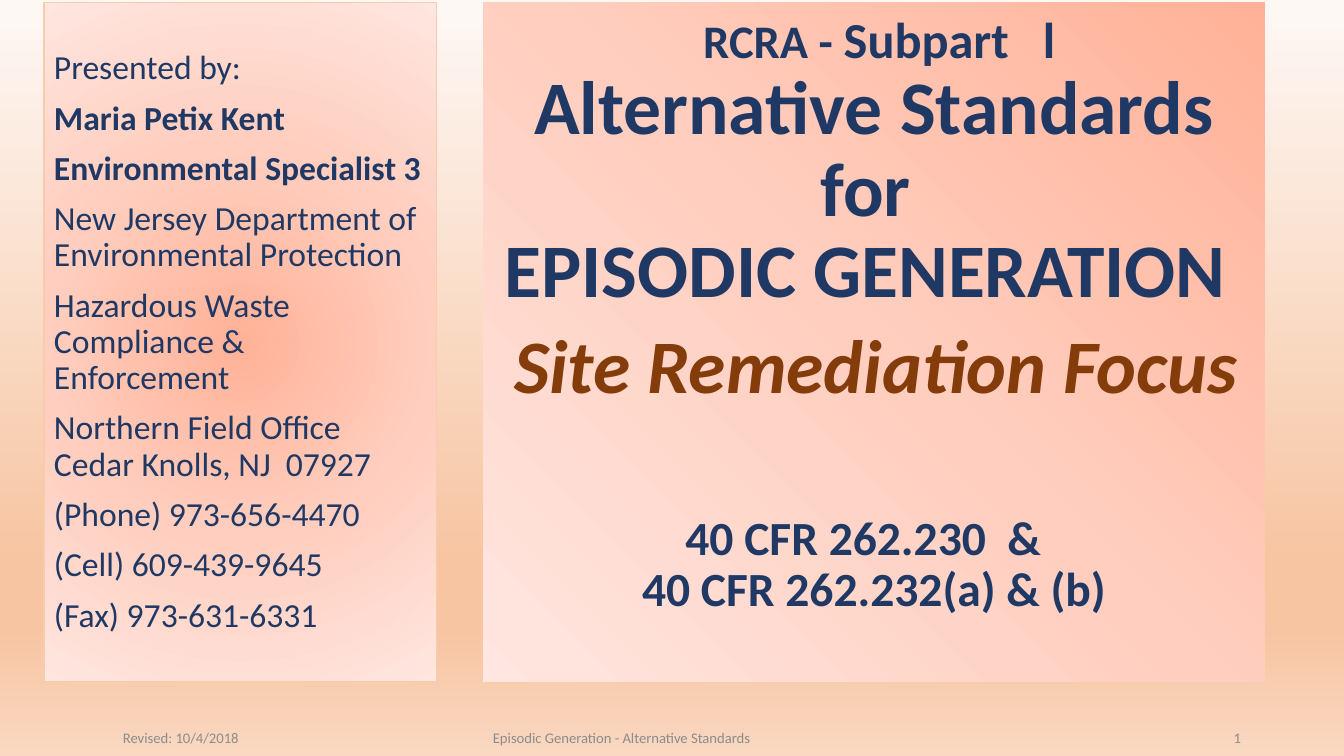
from lxml.etree import SubElement
from pptx import Presentation
from pptx.dml.color import RGBColor
from pptx.enum.shapes import MSO_SHAPE
from pptx.enum.text import MSO_ANCHOR, PP_ALIGN
from pptx.oxml.ns import qn
from pptx.util import Emu, Pt

NAVY, BROWN, GREY = "203864", "843C0B", "8C8C8C"
PEACH_STOPS = [(0, "FFB297"), (50, "FFCEBF"), (100, "FFE6E0")]
BACKDROP_STOPS = [(0, "FEF8F5"), (74, "F7C5A2"), (83, "F7C5A2"), (100, "FAD8C1")]
PRESENTER = [
    ("Presented by:", False),
    ("Maria Petix Kent", True),
    ("Environmental Specialist 3", True),
    ("New Jersey Department of Environmental Protection", False),
    ("Hazardous Waste Compliance & Enforcement", False),
    ("Northern Field Office  Cedar Knolls, NJ  07927", False),
    ("(Phone) 973-656-4470", False),
    ("(Cell) 609-439-9645", False),
    ("(Fax) 973-631-6331", False),
]
FOOTERS = [
    ("Revised: 10/4/2018", 113, 312, PP_ALIGN.LEFT),
    ("Episodic Generation - Alternative Standards", 483, 557, PP_ALIGN.LEFT),
    ("1", 1127, 124, PP_ALIGN.RIGHT),
]


def px(length):
    """Convert pixels to EMU."""
    return Emu(round(length * 914400 / 100.8))


def color(hex_code):
    """Turn a hex string into a colour."""
    return RGBColor.from_string(hex_code)


def paint_gradient(fill, owner, stops, focus=None):
    """Fill with a downward gradient, or a radial one around a focus."""
    fill.gradient()
    gradient = owner.find(".//" + qn("a:gradFill"))
    for child in list(gradient):
        gradient.remove(child)
    stop_list = SubElement(gradient, qn("a:gsLst"))
    for percent, hex_code in stops:
        stop = SubElement(stop_list, qn("a:gs"), pos=str(percent * 1000))
        SubElement(stop, qn("a:srgbClr"), val=hex_code)
    if focus is None:
        SubElement(gradient, qn("a:lin"), ang="5400000", scaled="0")
    else:
        circle = SubElement(gradient, qn("a:path"), path="circle")
        edges = {side: str(percent * 1000) for side, percent in zip("ltrb", focus)}
        SubElement(circle, qn("a:fillToRect"), **edges)


def add_panel(slide, left, width, focus, border=None):
    """Add a peach panel and return its text frame."""
    panel = slide.shapes.add_shape(MSO_SHAPE.RECTANGLE, px(left), px(3), px(width), px(679))
    panel.shadow.inherit = False
    paint_gradient(panel.fill, panel._element.spPr, PEACH_STOPS, focus)
    if border:
        panel.line.color.rgb = color(border)
        panel.line.width = Pt(0.75)
    else:
        panel.line.fill.background()
    frame = panel.text_frame
    frame.word_wrap = True
    return frame


def next_paragraph(frame, align, before=0, after=0, spacing=0.9):
    """Return the next free paragraph of a frame, laid out."""
    paragraph = frame.paragraphs[0]
    if paragraph.runs:
        paragraph = frame.add_paragraph()
    paragraph.alignment = align
    paragraph.space_before = Pt(before)
    paragraph.space_after = Pt(after)
    paragraph.line_spacing = spacing
    return paragraph


def write(paragraph, text, size=24, ink=NAVY, bold=False, italic=False):
    """Append formatted text to a paragraph."""
    run = paragraph.add_run()
    run.text = text
    font = run.font
    font.name, font.size, font.bold, font.italic = "Calibri", Pt(size), bold, italic
    font.color.rgb = color(ink)


def add_title(slide):
    """Add the title panel."""
    frame = add_panel(slide, 483, 782, (100, 0, 0, 100))
    frame.vertical_anchor = MSO_ANCHOR.TOP
    frame.margin_top = px(12)
    subpart = next_paragraph(frame, PP_ALIGN.CENTER)
    write(subpart, " RCRA - ", size=33.3, bold=True)
    write(subpart, "Subpart   l", size=36, bold=True)
    for text in ("Alternative Standards for ", "EPISODIC GENERATION "):
        write(next_paragraph(frame, PP_ALIGN.CENTER), text, size=54, bold=True)
    focus_line = next_paragraph(frame, PP_ALIGN.CENTER)
    write(focus_line, " ", size=65.7, bold=True)
    write(focus_line, "Site Remediation Focus ", size=54, ink=BROWN, bold=True, italic=True)
    for text, before in (("40 CFR 262.230  &  ", 72), ("40 CFR 262.232(a) & (b)", 0)):
        write(next_paragraph(frame, PP_ALIGN.CENTER, before), text, size=34, bold=True)


def add_presenter(slide):
    """Add the panel with the presenter's details."""
    frame = add_panel(slide, 44, 393, (50, 50, 50, 50), border="F8CBAD")
    frame.vertical_anchor = MSO_ANCHOR.MIDDLE
    for text, bold in PRESENTER:
        write(next_paragraph(frame, PP_ALIGN.LEFT, before=10), text, bold=bold)


def add_footer(slide, text, left, width, align):
    """Add one footer text."""
    frame = slide.shapes.add_textbox(px(left), px(723), px(width), px(30)).text_frame
    frame.word_wrap = True
    frame.vertical_anchor = MSO_ANCHOR.MIDDLE
    write(next_paragraph(frame, align, after=6, spacing=1.0), text, size=10.5, ink=GREY)


def main():
    """Build and save the slide."""
    deck = Presentation()
    deck.slide_width, deck.slide_height = px(1344), px(756)
    slide = deck.slides.add_slide(deck.slide_layouts[6])
    paint_gradient(slide.background.fill, slide._element, BACKDROP_STOPS)
    add_title(slide)
    add_presenter(slide)
    for footer in FOOTERS:
        add_footer(slide, *footer)
    deck.save("out.pptx")


if __name__ == "__main__":
    main()
